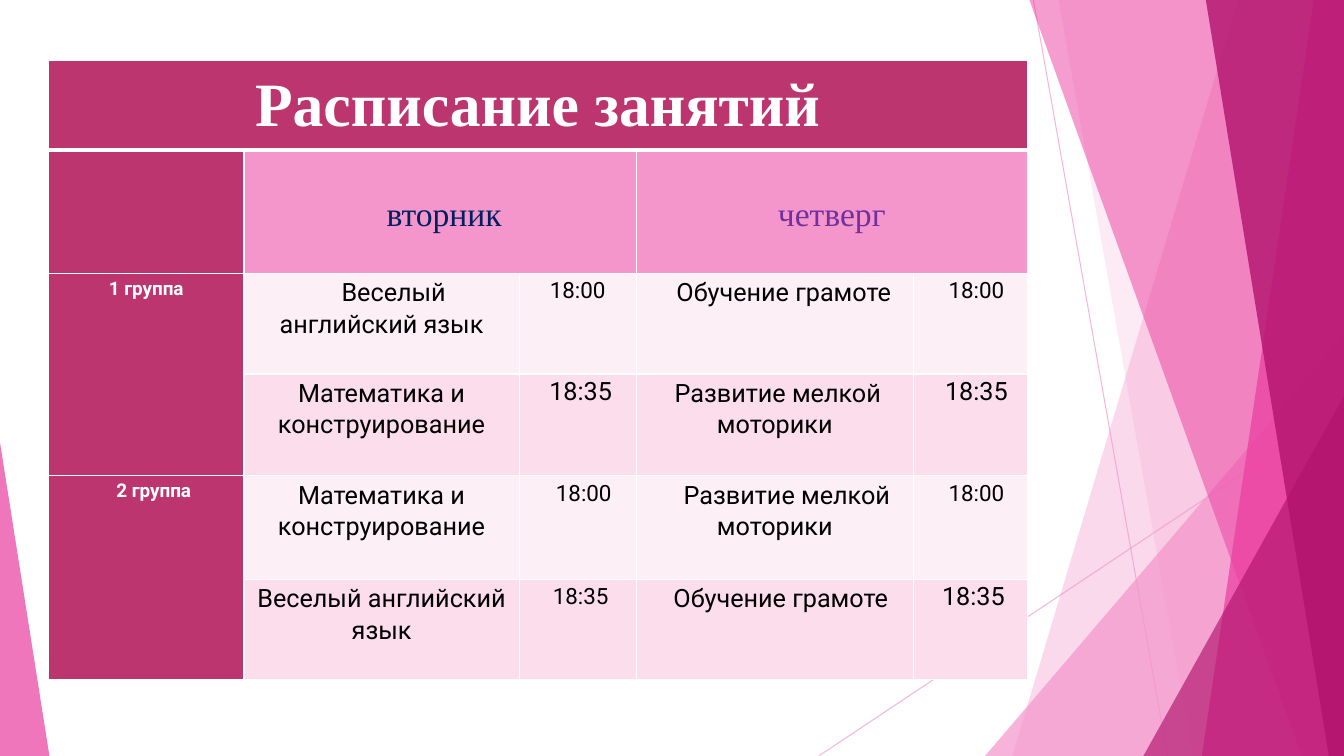
from lxml.etree import SubElement
from pptx import Presentation
from pptx.dml.color import RGBColor
from pptx.enum.shapes import MSO_CONNECTOR, MSO_SHAPE
from pptx.enum.text import MSO_ANCHOR, PP_ALIGN
from pptx.oxml.ns import qn
from pptx.util import Inches, Pt

SLIDE_W, SLIDE_H = 13.33, 7.5
PALE, PINK, PURPLE = "F496CB", "EB3D9F", "B2136D"
HEAD, LIGHT, ROSE = "BC356F", "FDEFF6", "FBDDEC"
WHITE, BLACK = "FFFFFF", "000000"
SERIF, SANS = "Times New Roman", "Roboto"
STEP = 0.06  # first-line indent unit, inches

COLS = [1.94, 2.73, 1.16, 2.75, 1.13]
ROWS = [0.89, 1.22, 1, 1.01, 1.03, 0.99]
DAYS = [(1, "вторник", "002060", 0.08), (3, "четверг", "7030A0", 0)]
GROUPS = [(2, "1 группа", 0), (4, "2 группа", 2.5)]
# (text, size, indent in steps) for each cell right of the group column
LESSONS = [
    [("Веселый английский язык", 18, 4), ("18:00", 16, 0),
     ("Обучение грамоте", 18, 3), ("18:00", 16, 2)],
    [("Математика и конструирование", 18, 0), ("18:35", 18, 1),
     ("Развитие мелкой моторики", 18, 1), ("18:35", 18, 2)],
    [("Математика и конструирование", 18, 0), ("18:00", 16, 2),
     ("Развитие мелкой моторики", 18, 4), ("18:00", 16, 2)],
    [("Веселый английский язык", 18, 0), ("18:35", 16, 1),
     ("Обучение грамоте", 18, 2), ("18:35", 18, 1)],
]


def rgb(value):
    return RGBColor.from_string(value)


def set_alpha(fill_parent, percent):
    """Make the solid colour inside the given element translucent."""
    clr = next(fill_parent.iter(qn("a:srgbClr")))
    SubElement(clr, qn("a:alpha"), val=str(percent * 1000))


def paint(sp, color, alpha):
    sp.shadow.inherit = False
    sp.fill.solid()
    sp.fill.fore_color.rgb = rgb(color)
    sp.line.fill.background()
    set_alpha(sp.element.spPr, alpha)


def add_triangle(slide, box, apex, color, alpha):
    sp = slide.shapes.add_shape(MSO_SHAPE.ISOSCELES_TRIANGLE, *map(Inches, box))
    sp.adjustments[0] = apex
    paint(sp, color, alpha)


def add_band(slide, box, top_x, bottom_x, color, alpha):
    """Fill the box from a slanted left edge to its right side."""
    x, y, w, h = box
    pts = [(x + top_x, y), (x + w, y), (x + w, y + h), (x + bottom_x, y + h)]
    pts = [(Inches(px), Inches(py)) for px, py in pts]
    builder = slide.shapes.build_freeform(*pts[0], scale=1.0)
    builder.add_line_segments(pts[1:], close=True)
    paint(builder.convert_to_shape(), color, alpha)


def add_hairline(slide, x1, y1, x2, y2):
    ln = slide.shapes.add_connector(MSO_CONNECTOR.STRAIGHT, *map(Inches, (x1, y1, x2, y2)))
    ln.line.color.rgb = rgb(PALE)
    ln.line.width = Pt(0.75)
    set_alpha(ln.line._get_or_add_ln(), 70)
    SubElement(ln._element.spPr, qn("a:effectLst"))


def draw_facets(slide, box):
    x, y, w, h = box
    right, bottom = x + w, y + h
    add_hairline(slide, x + 0.48, y, x + 1.81, bottom)
    add_hairline(slide, right, y + 4.03, x - 1.65, bottom)

    def band(*args):
        add_band(slide, box, *args)

    def corner(width, height, color, alpha):
        add_triangle(slide, (right - width, bottom - height, width, height), 1, color, alpha)

    band(2.51, 0.27, PALE, 36)
    band(0.73, 2.06, PALE, 20)
    corner(3.56, 4.17, PALE, 72)
    band(0.44, 3.14, PINK, 50)
    band(3.26, 2.15, PINK, 70)
    band(2.19, 3.41, PURPLE, 80)
    corner(1.99, 3.57, PURPLE, 66)


def style_cell(cell, fill, bottom=1):
    cell.fill.solid()
    cell.fill.fore_color.rgb = rgb(fill)
    cell.margin_left = cell.margin_right = Inches(0.03)
    cell.margin_top = cell.margin_bottom = Inches(0.03)
    tcPr = cell._tc.get_or_add_tcPr()
    for i, side in enumerate(("lnL", "lnR", "lnT", "lnB")):
        width = bottom if side == "lnB" else 1
        ln = tcPr.makeelement(qn("a:" + side), {"w": str(Pt(width))})
        SubElement(SubElement(ln, qn("a:solidFill")), qn("a:srgbClr"), val=WHITE)
        tcPr.insert(i, ln)


def write(cell, text, size, color, font=SANS, bold=False, indent=0, spacing=1.07):
    p = cell.text_frame.paragraphs[0]
    p.alignment = PP_ALIGN.CENTER
    p.line_spacing = spacing
    if indent:
        p._p.get_or_add_pPr().set("indent", str(Inches(indent)))
    r = p.add_run()
    r.text = text
    r.font.size = Pt(size)
    r.font.name = font
    r.font.bold = bold
    r.font.color.rgb = rgb(color)


def draw_timetable(slide, box):
    frame = slide.shapes.add_table(len(ROWS), len(COLS), *map(Inches, box))
    table = frame.table
    table.first_row = table.horz_banding = False
    for col, width in zip(table.columns, COLS):
        col.width = Inches(width)
    for row, height in zip(table.rows, ROWS):
        row.height = Inches(height)
    for r in range(len(ROWS)):
        body = (HEAD, PALE, LIGHT, ROSE, LIGHT, ROSE)[r]
        for c in range(len(COLS)):
            style_cell(table.cell(r, c), body if c else HEAD, 1 if r else 3)

    title = table.cell(0, 0)
    title.merge(table.cell(0, len(COLS) - 1))
    title.vertical_anchor = MSO_ANCHOR.MIDDLE
    write(title, "Расписание занятий", 44, WHITE, SERIF, True, spacing=1)

    for c, day, color, indent in DAYS:
        cell = table.cell(1, c)
        cell.merge(table.cell(1, c + 1))
        cell.vertical_anchor = MSO_ANCHOR.MIDDLE
        cell.margin_top = Inches(0.07)
        write(cell, day, 24, color, SERIF, indent=indent)

    for r, group, steps in GROUPS:
        cell = table.cell(r, 0)
        cell.merge(table.cell(r + 1, 0))
        write(cell, group, 13.5, WHITE, bold=True, indent=steps * STEP)

    for r, lessons in enumerate(LESSONS, 2):
        for c, (text, size, steps) in enumerate(lessons, 1):
            spacing = 1 if text == "18:35" and size == 18 else 1.07
            write(table.cell(r, c), text, size, BLACK, indent=steps * STEP, spacing=spacing)


def main():
    prs = Presentation()
    prs.slide_width, prs.slide_height = Inches(SLIDE_W), Inches(SLIDE_H)
    slide = prs.slides.add_slide(prs.slide_layouts[6])
    draw_facets(slide, (9.77, 0, SLIDE_W - 9.77, SLIDE_H))
    add_triangle(slide, (0, 4.39, 0.49, SLIDE_H - 4.39), 0, PINK, 70)
    draw_timetable(slide, (0.48, 0.6, sum(COLS), sum(ROWS)))
    prs.save("out.pptx")


if __name__ == "__main__":
    main()
